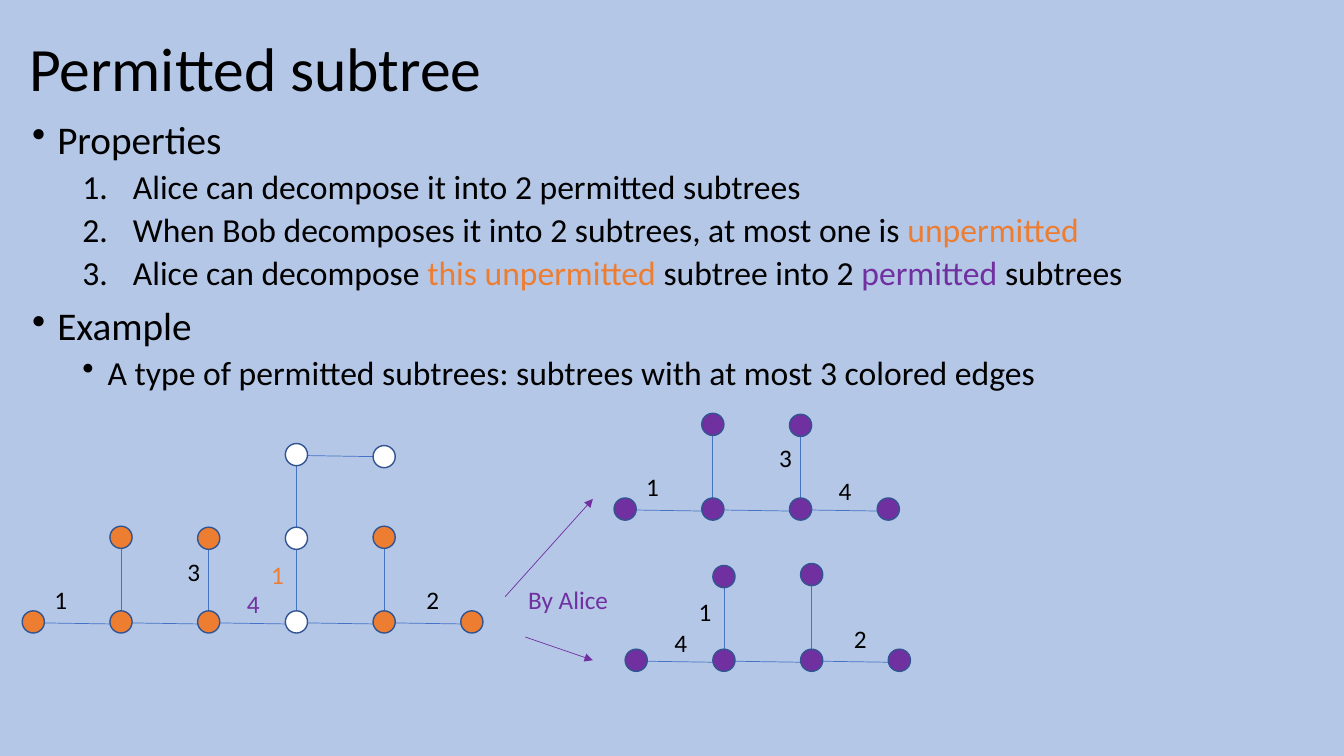
from dataclasses import dataclass
from typing import Any, Optional

import pptx
import pptx.dml.color
import pptx.enum.shapes
import pptx.enum.text
import pptx.oxml.ns
import pptx.util
from lxml import etree

PX = 9144  # EMU; 100 px to the inch
NODE_SIZE = 22
COLUMN_STEP = 87
LABEL_HEIGHT = 40


@dataclass(frozen=True)
class Theme:
    font: str = "Calibri"
    background: str = "B4C7E7"
    black: str = "000000"
    white: str = "FFFFFF"
    orange: str = "ED7D31"
    purple: str = "7030A0"
    edge: str = "4472C4"
    outline: str = "325491"
    title_size: int = 44
    heading_size: int = 28
    item_size: int = 24
    label_size: int = 18


THEME = Theme()


@dataclass(frozen=True)
class Span:
    text: str
    color: str = THEME.black


@dataclass(frozen=True)
class Line:
    spans: tuple[Span, ...]
    size: int = THEME.item_size
    level: int = 0
    margin: int = 0
    hanging: int = 0
    space_before: int = 0
    bullet: Optional[tuple[str, dict[str, str]]] = None


@dataclass(frozen=True)
class Node:
    """A tree node; parent is the index of the node it hangs from."""
    column: int
    top: int
    fill: str
    parent: Optional[int]


@dataclass(frozen=True)
class Tree:
    left: int
    nodes: tuple[Node, ...]


@dataclass(frozen=True)
class Label:
    text: str
    left: int
    top: int
    color: str = THEME.black
    width: int = 32


@dataclass(frozen=True)
class Arrow:
    start: tuple[int, int]
    end: tuple[int, int]


def trunk(top: int, fills: list[str]) -> tuple[Node, ...]:
    return tuple(Node(column, top, fill, column - 1 if column else None)
                 for column, fill in enumerate(fills))


def heading(text: str, space_before: int = 0) -> Line:
    return Line((Span(text),), THEME.heading_size, 0, 25, 25, space_before,
                ("buChar", {"char": "•"}))


def numbered(*spans: Span) -> Line:
    return Line(spans, level=1, margin=100, hanging=50, space_before=5,
                bullet=("buAutoNum", {"type": "arabicPeriod"}))


def bulleted(text: str) -> Line:
    return Line((Span(text),), level=1, margin=75, hanging=25, space_before=5,
                bullet=("buChar", {"char": "•"}))


TITLE = Line((Span("Permitted subtree"),), THEME.title_size)
BODY = [
    heading("Properties"),
    numbered(Span("Alice can decompose it into 2 permitted subtrees")),
    numbered(Span("When Bob decomposes it into 2 subtrees, at most one is "),
             Span("unpermitted", THEME.orange)),
    numbered(Span("Alice can decompose "), Span("this unpermitted ", THEME.orange),
             Span("subtree into 2 "), Span("permitted", THEME.purple), Span(" subtrees")),
    heading("Example", space_before=10),
    bulleted("A type of permitted subtrees: subtrees with at most 3 colored edges"),
]
WHOLE_TREE = Tree(22, trunk(606, [THEME.orange] * 3 + [THEME.white] + [THEME.orange] * 2) + (
    Node(1, 522, THEME.orange, 1), Node(2, 523, THEME.orange, 2),
    Node(3, 523, THEME.white, 3), Node(4, 522, THEME.orange, 4),
    Node(3, 440, THEME.white, 8), Node(4, 442, THEME.white, 10)))
UPPER_TREE = Tree(609, trunk(494, [THEME.purple] * 4) + (
    Node(1, 410, THEME.purple, 1), Node(2, 411, THEME.purple, 2)))
LOWER_TREE = Tree(620, trunk(644, [THEME.purple] * 4) + (
    Node(1, 561, THEME.purple, 1), Node(2, 559, THEME.purple, 2)))
LABELS = [
    Label("1", 44, 575), Label("2", 413, 575), Label("3", 176, 547),
    Label("1", 259, 550, THEME.orange), Label("4", 235, 579, THEME.purple),
    Label("1", 631, 463), Label("3", 763, 434), Label("4", 822, 467),
    Label("2", 837, 613), Label("1", 683, 587), Label("4", 659, 617),
    Label("By Alice", 514, 575, THEME.purple, 131),
]
ARROWS = [Arrow((501, 592), (588, 495)), Arrow((521, 632), (588, 655))]


def rgb(color: str) -> pptx.dml.color.RGBColor:
    return pptx.dml.color.RGBColor.from_string(color)


def add_text(page: Any, left: int, top: int, width: int, height: int,
             lines: list[Line], spacing: float = 1.0, middle: bool = False) -> None:
    box = page.shapes.add_textbox(left * PX, top * PX, width * PX, height * PX)
    frame = box.text_frame
    frame.word_wrap = True
    anchors = pptx.enum.text.MSO_ANCHOR
    frame.vertical_anchor = anchors.MIDDLE if middle else anchors.TOP
    for index, line in enumerate(lines):
        para = frame.add_paragraph() if index else frame.paragraphs[0]
        para.level = line.level
        para.line_spacing = spacing
        para.space_before = pptx.util.Pt(line.space_before)
        if line.bullet:
            tag, attributes = line.bullet
            properties = para._p.get_or_add_pPr()
            properties.set("marL", str(line.margin * PX))
            properties.set("indent", str(-line.hanging * PX))
            etree.SubElement(properties, pptx.oxml.ns.qn("a:" + tag), attributes)
        for part in line.spans:
            span = para.add_run()
            span.text = part.text
            span.font.name = THEME.font
            span.font.size = pptx.util.Pt(line.size)
            span.font.color.rgb = rgb(part.color)


def add_line(page: Any, start: tuple[int, int], end: tuple[int, int],
             color: str, arrow: bool = False) -> None:
    connector = page.shapes.add_connector(
        pptx.enum.shapes.MSO_CONNECTOR.STRAIGHT, *(value * PX for value in start + end))
    connector.line.color.rgb = rgb(color)
    connector.line.width = pptx.util.Pt(0.5)
    if arrow:
        etree.SubElement(connector.line._get_or_add_ln(),
                         pptx.oxml.ns.qn("a:tailEnd"), {"type": "triangle"})
    etree.SubElement(connector._element.spPr, pptx.oxml.ns.qn("a:effectLst"))


def add_tree(page: Any, tree: Tree) -> None:
    """Draw edges, then nodes; level edges fall by one px to the right."""
    for node in tree.nodes:
        x = tree.left + node.column * COLUMN_STEP
        if node.parent is None:
            continue
        parent = tree.nodes[node.parent]
        if parent.column == node.column:
            center = x + NODE_SIZE // 2
            start, end = (center, node.top + NODE_SIZE), (center, parent.top)
        else:
            start = (x - COLUMN_STEP + NODE_SIZE, parent.top + 12)
            end = (x, parent.top + 13)
        add_line(page, start, end, THEME.edge)
    for node in tree.nodes:
        x = tree.left + node.column * COLUMN_STEP
        circle = page.shapes.add_shape(pptx.enum.shapes.MSO_SHAPE.OVAL, x * PX,
                                       node.top * PX, NODE_SIZE * PX, NODE_SIZE * PX)
        circle.shadow.inherit = False
        circle.fill.solid()
        circle.fill.fore_color.rgb = rgb(node.fill)
        circle.line.color.rgb = rgb(THEME.outline)
        circle.line.width = pptx.util.Pt(1)


def main() -> None:
    deck = pptx.Presentation()
    deck.slide_width, deck.slide_height = 1333 * PX, 750 * PX
    page = deck.slides.add_slide(deck.slide_layouts[6])
    page.background.fill.solid()
    page.background.fill.fore_color.rgb = rgb(THEME.background)
    add_text(page, 19, -2, 1150, 145, [TITLE], 0.9, middle=True)
    add_text(page, 22, 115, 1280, 327, BODY, 0.9)
    for tree in (WHOLE_TREE, UPPER_TREE, LOWER_TREE):
        add_tree(page, tree)
    for label in LABELS:
        add_text(page, label.left, label.top, label.width, LABEL_HEIGHT,
                 [Line((Span(label.text, label.color),), THEME.label_size)])
    for arrow in ARROWS:
        add_line(page, arrow.start, arrow.end, THEME.purple, arrow=True)
    deck.save("out.pptx")


if __name__ == "__main__":
    main()
